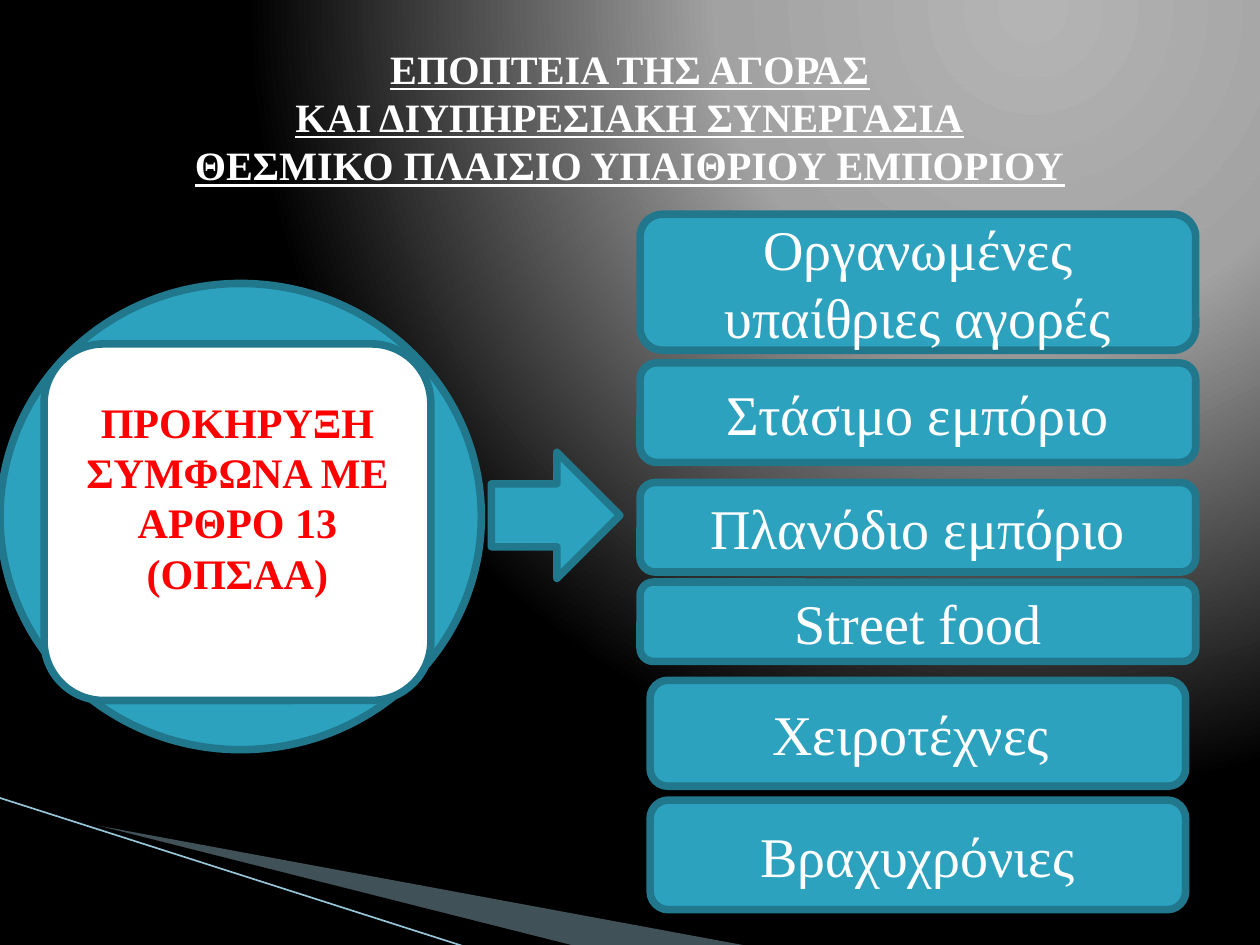
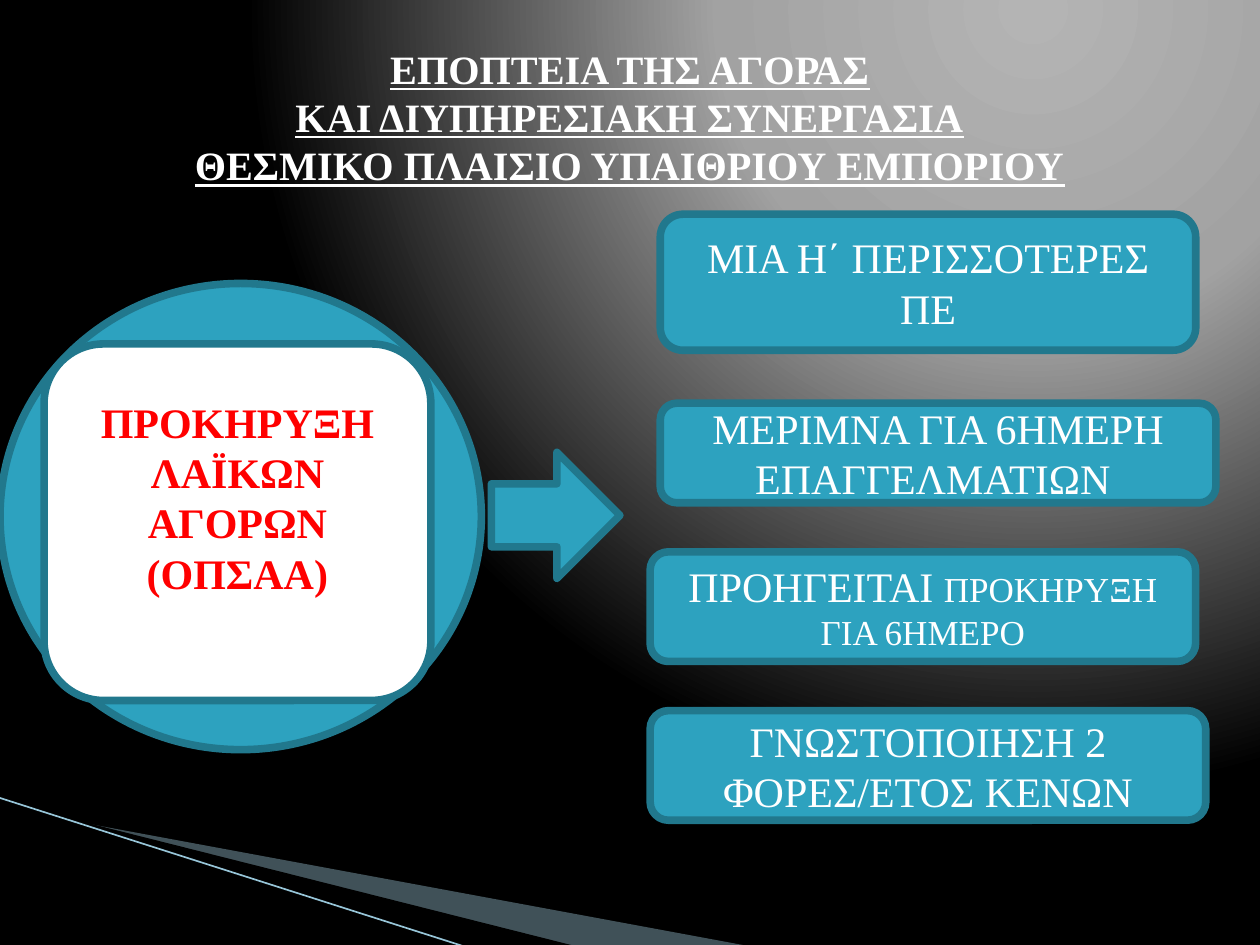
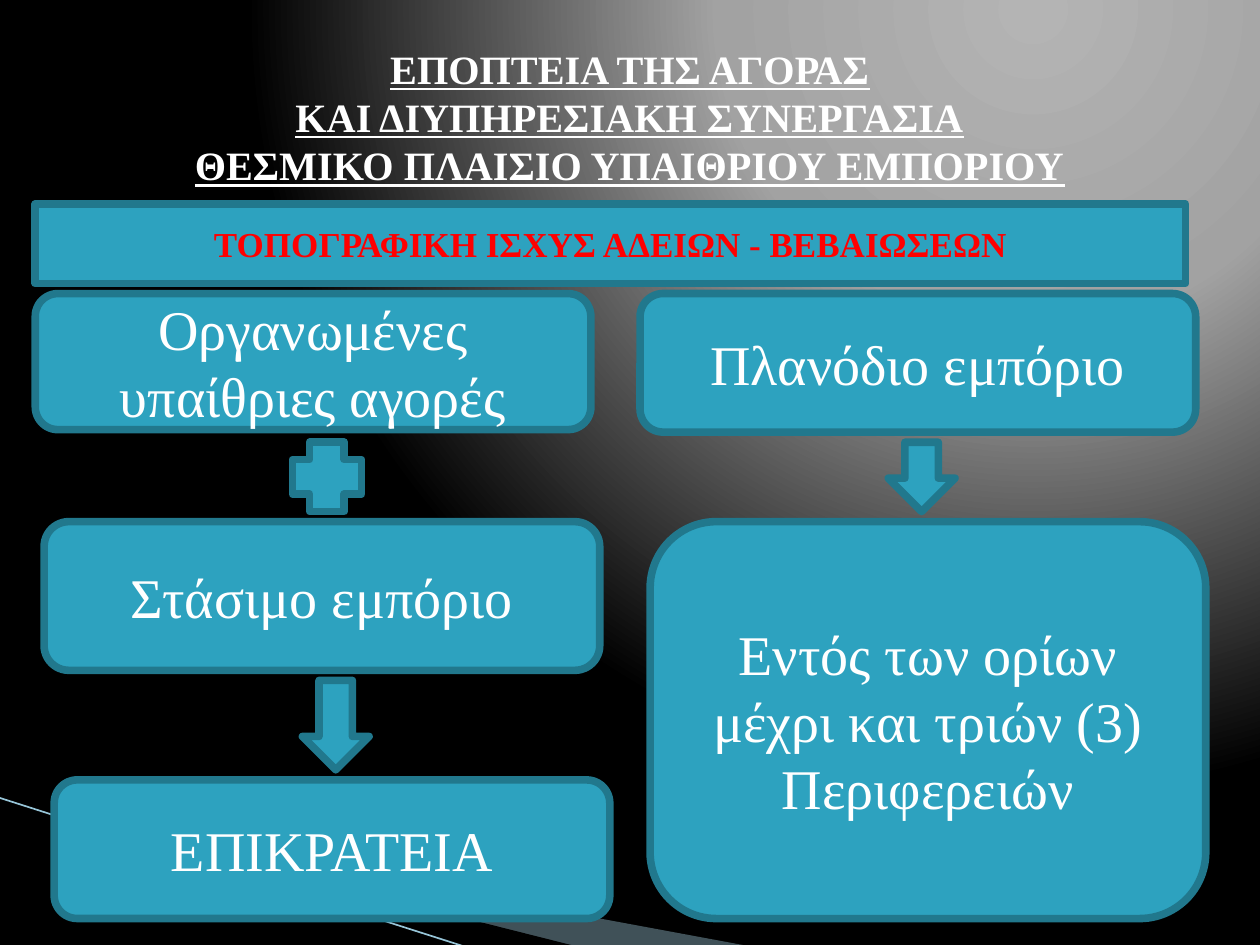
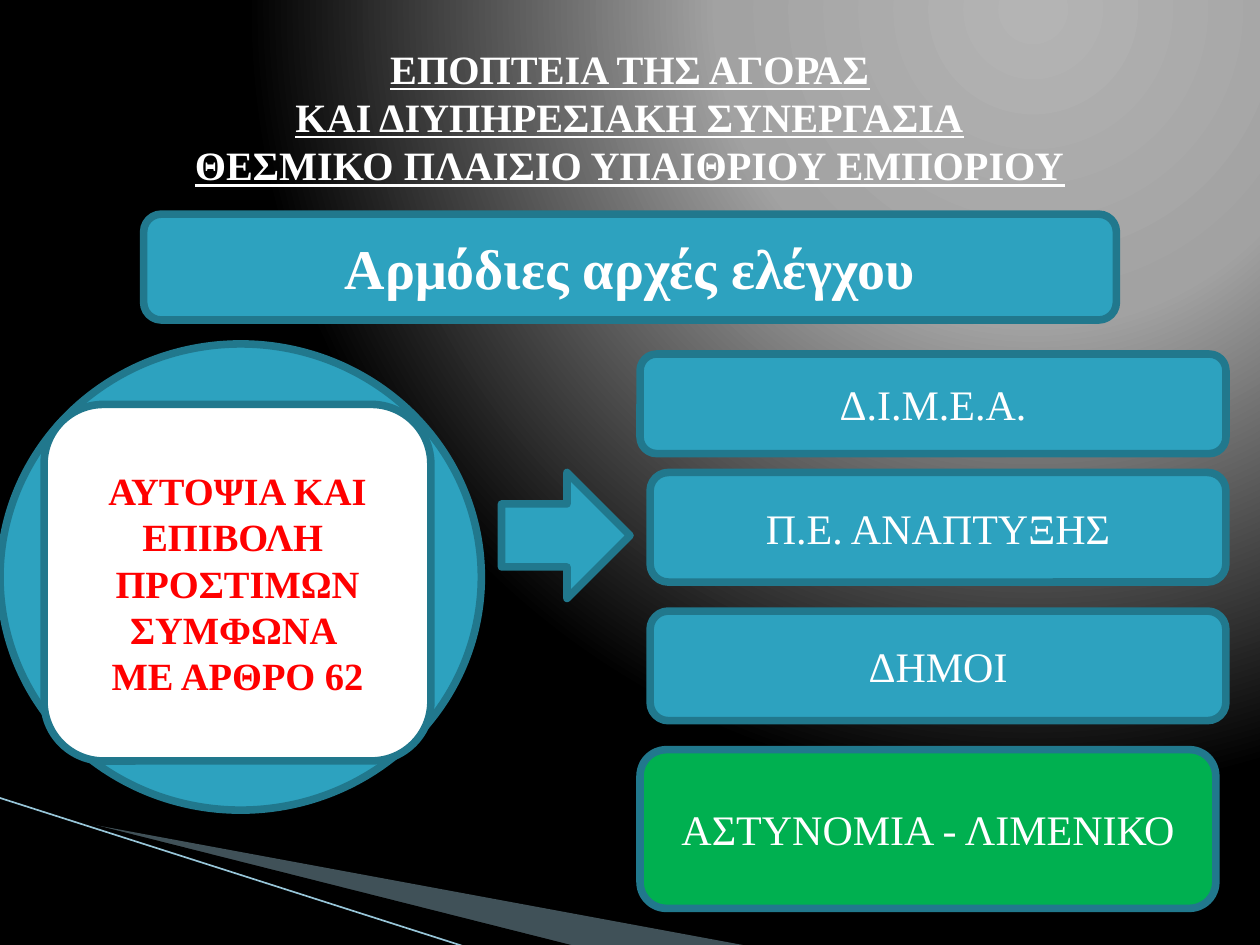
from pptx import Presentation
from pptx.dml.color import RGBColor
from pptx.enum.shapes import MSO_CONNECTOR, MSO_SHAPE
from pptx.enum.text import MSO_ANCHOR, PP_ALIGN
from pptx.oxml import parse_xml
from pptx.oxml.ns import nsdecls, qn
from pptx.oxml.xmlchemy import OxmlElement
from pptx.util import Inches, Pt

ROUNDED, RECTANGLE = MSO_SHAPE.ROUNDED_RECTANGLE, MSO_SHAPE.RECTANGLE
OVAL, PLUS = MSO_SHAPE.OVAL, MSO_SHAPE.CROSS
RIGHT_ARROW, DOWN_ARROW = MSO_SHAPE.RIGHT_ARROW, MSO_SHAPE.DOWN_ARROW
STRAIGHT = MSO_CONNECTOR.STRAIGHT
MIDDLE, CENTER = MSO_ANCHOR.MIDDLE, PP_ALIGN.CENTER

TEAL = RGBColor(0x2D, 0xA2, 0xBF)
DARK_TEAL = RGBColor(0x21, 0x78, 0x8D)
PALE_BLUE = RGBColor(0xA0, 0xCB, 0xDC)
LINE_BLUE = RGBColor(0x97, 0xC5, 0xD8)
GREEN = RGBColor(0x00, 0xB0, 0x50)
RED = RGBColor(0xFF, 0x00, 0x00)
WHITE = RGBColor(0xFF, 0xFF, 0xFF)
BLACK = RGBColor(0x00, 0x00, 0x00)
FONT = "Times New Roman"
OUTLINE = Pt(4.33)
BACKGROUND_STOPS = [(0, "B4B4B4"), (40, "A2A2A2"), (100, "000000")]
WEDGES = [  # corner points, fill, opacity in percent
    ([(0.55, 6.51), (5.95, 7.51), (4.56, 7.51), (0.55, 6.5)], PALE_BLUE, 40),
    ([(0.53, 6.49), (4.57, 7.51), (3.72, 7.52), (0.54, 6.5)], BLACK, 100),
]

TITLE = ["ΕΠΟΠΤΕΙΑ ΤΗΣ ΑΓΟΡΑΣ", "ΚΑΙ ΔΙΥΠΗΡΕΣΙΑΚΗ ΣΥΝΕΡΓΑΣΙΑ",
         "ΘΕΣΜΙΚΟ ΠΛΑΙΣΙΟ ΥΠΑΙΘΡΙΟΥ ΕΜΠΟΡΙΟΥ"]

# Each box: text, (left, top, width, height), text size, further settings.
# Each topic: circle top, paragraphs, text size, space below the text.
SLIDES = [
    {
        "topic": (2.25, ["ΠΡΟΚΗΡΥΞΗ ΣΥΜΦΩΝΑ ΜΕ ΑΡΘΡΟ 13", "(ΟΠΣΑΑ)"], 24, 0.45),
        "symbols": [(RIGHT_ARROW, (3.9, 3.59, 1.02, 1))],
        "boxes": [
            ("Οργανωμένες υπαίθριες αγορές", (5.08, 1.7, 4.41, 1.08), 32, {}),
            ("Στάσιμο εμπόριο", (5.08, 2.88, 4.41, 0.79), 32, {}),
            ("Πλανόδιο εμπόριο", (5.08, 3.83, 4.41, 0.71), 32, {}),
            ("Street food", (5.08, 4.62, 4.41, 0.63), 32, {}),
            ("Χειροτέχνες ", (5.16, 5.4, 4.25, 0.84), 32, {}),
            ("Βραχυχρόνιες", (5.16, 6.35, 4.25, 0.87), 32, {}),
        ],
    },
    {
        "topic": (2.25, ["ΠΡΟΚΗΡΥΞΗ ΛΑΪΚΩΝ ΑΓΟΡΩΝ", "(ΟΠΣΑΑ)"], 24, 0.45),
        "symbols": [(RIGHT_ARROW, (3.9, 3.59, 1.02, 1))],
        "boxes": [
            ("ΜΙΑ Η΄ ΠΕΡΙΣΣΟΤΕΡΕΣ ΠΕ", (5.24, 1.7, 4.25, 1.08), 24, {}),
            ("ΜΕΡΙΜΝΑ ΓΙΑ 6ΗΜΕΡΗ ΕΠΑΓΓΕΛΜΑΤΙΩΝ ", (5.24, 3.2, 4.41, 0.79), 24, {}),
            ("ΠΡΟΗΓΕΙΤΑΙ ", (5.16, 4.38, 4.33, 0.87), 24,
             {"small_text": "ΠΡΟΚΗΡΥΞΗ ΓΙΑ 6ΗΜΕΡΟ"}),
            ("ΓΝΩΣΤΟΠΟΙΗΣΗ 2 ΦΟΡΕΣ/ΕΤΟΣ ΚΕΝΩΝ", (5.16, 5.64, 4.41, 0.87), 24, {}),
        ],
    },
    {
        "symbols": [
            (PLUS, (2.32, 3.51, 0.55, 0.55)),
            (DOWN_ARROW, (2.4, 5.4, 0.53, 0.71)),
            (DOWN_ARROW, (7.05, 3.51, 0.53, 0.55)),
        ],
        "boxes": [
            ("ΤΟΠΟΓΡΑΦΙΚΗ ΙΣΧΥΣ ΑΔΕΙΩΝ - ΒΕΒΑΙΩΣΕΩΝ", (0.28, 1.62, 9.13, 0.63), 20,
             {"kind": RECTANGLE, "color": RED, "bold": True}),
            ("Οργανωμένες υπαίθριες αγορές", (0.28, 2.33, 4.41, 1.08), 32, {}),
            ("Στάσιμο εμπόριο", (0.35, 4.14, 4.41, 1.18), 32, {}),
            ("ΕΠΙΚΡΑΤΕΙΑ", (0.43, 6.19, 4.41, 1.1), 32, {}),
            ("Πλανόδιο εμπόριο", (5.08, 2.33, 4.41, 1.1), 32, {}),
            ("Εντός των ορίων μέχρι και τριών (3) Περιφερειών",
             (5.16, 4.14, 4.41, 3.15), 32, {}),
        ],
    },
    {
        "topic": (2.73, ["ΑΥΤΟΨΙΑ ΚΑΙ ΕΠΙΒΟΛΗ ", "ΠΡΟΣΤΙΜΩΝ", "ΣΥΜΦΩΝΑ ",
                         "ΜΕ ΑΡΘΡΟ 62"], 22, 0.05),
        "symbols": [(RIGHT_ARROW, (3.98, 3.75, 1.02, 1))],
        "boxes": [
            ("Αρμόδιες αρχές ελέγχου", (1.14, 1.7, 7.72, 0.84), 32, {"bold": True}),
            ("Δ.Ι.Μ.Ε.Α.", (5.08, 2.81, 4.65, 0.79), 24, {}),
            ("Π.Ε. ΑΝΑΠΤΥΞΗΣ", (5.16, 3.75, 4.57, 0.87), 24, {}),
            ("ΔΗΜΟΙ", (5.16, 4.85, 4.57, 0.87), 24, {}),
            ("ΑΣΤΥΝΟΜΙΑ - ΛΙΜΕΝΙΚΟ", (5.08, 5.95, 4.57, 1.26), 24, {"fill": GREEN}),
        ],
    },
]


def set_background(slide):
    stops = "".join(f'<a:gs pos="{position * 1000}"><a:srgbClr val="{color}"/></a:gs>'
                    for position, color in BACKGROUND_STOPS)
    background = parse_xml(
        f'<p:bg {nsdecls("p", "a")}><p:bgPr><a:gradFill rotWithShape="1">'
        f'<a:gsLst>{stops}</a:gsLst><a:path path="circle">'
        '<a:fillToRect l="65000" t="0" r="0" b="98000"/></a:path></a:gradFill>'
        '<a:effectLst/></p:bgPr></p:bg>')
    slide.element.find(qn("p:cSld")).insert(0, background)


def add_wedges(slide):
    """Draw the wedge and the thin line in the lower left corner."""
    for points, color, opacity in WEDGES:
        corners = [(Inches(x), Inches(y)) for x, y in points]
        builder = slide.shapes.build_freeform(*corners[0])
        builder.add_line_segments(corners[1:], close=True)
        wedge = builder.convert_to_shape()
        wedge.shadow.inherit = False
        wedge.fill.solid()
        wedge.fill.fore_color.rgb = color
        wedge.line.fill.background()
        if opacity < 100:
            alpha = OxmlElement("a:alpha")
            alpha.set("val", str(opacity * 1000))
            wedge.element.spPr.find(f"{qn('a:solidFill')}/{qn('a:srgbClr')}").append(alpha)
    ends = [Inches(value) for value in (-0.01, 6.33, 3.71, 7.52)]
    connector = slide.shapes.add_connector(STRAIGHT, *ends)
    connector.line.color.rgb = LINE_BLUE
    connector.line.width = Pt(0.95)
    connector.element.spPr.append(OxmlElement("a:effectLst"))


def add_run(paragraph, text, size, color=WHITE, **settings):
    run = paragraph.add_run()
    run.text = text
    run.font.color.rgb = color
    for name, value in {"name": FONT, "size": Pt(size), **settings}.items():
        setattr(run.font, name, value)


def prepare_frame(shape):
    frame = shape.text_frame
    frame.word_wrap = True
    frame.vertical_anchor = MIDDLE
    frame.paragraphs[0].alignment = CENTER
    return frame


def add_title(slide):
    title = slide.shapes.add_textbox(Inches(0.5), Inches(0.3), Inches(9), Inches(1.25))
    paragraph = prepare_frame(title).paragraphs[0]
    for index, line in enumerate(TITLE):
        if index:
            paragraph.add_line_break()
        add_run(paragraph, line, 23, bold=True, underline=True)


def add_outlined(slide, kind, place, fill=TEAL):
    shape = slide.shapes.add_shape(kind, *[Inches(value) for value in place])
    shape.shadow.inherit = False
    shape.fill.solid()
    shape.fill.fore_color.rgb = fill
    shape.line.color.rgb = DARK_TEAL
    shape.line.width = OUTLINE
    return shape


def add_box(slide, text, place, size, kind=ROUNDED, fill=TEAL, small_text="", **settings):
    paragraph = prepare_frame(add_outlined(slide, kind, place, fill)).paragraphs[0]
    add_run(paragraph, text, size, **settings)
    if small_text:
        add_run(paragraph, small_text, 20, **settings)


def add_topic(slide, top, lines, size, space_below):
    """Draw the circle with the white panel that names the topic."""
    add_outlined(slide, OVAL, (0, top, 3.82, 3.7))
    panel = add_outlined(slide, ROUNDED, (0.35, top + 0.48, 3.07, 2.83), WHITE)
    frame = prepare_frame(panel)
    frame.margin_bottom = Inches(space_below)
    for index, line in enumerate(lines):
        paragraph = frame.add_paragraph() if index else frame.paragraphs[0]
        paragraph.alignment = CENTER
        add_run(paragraph, line, size, RED, bold=True)


def main():
    presentation = Presentation()
    presentation.slide_width, presentation.slide_height = Inches(10), Inches(7.5)
    for content in SLIDES:
        slide = presentation.slides.add_slide(presentation.slide_layouts[6])
        set_background(slide)
        add_wedges(slide)
        add_title(slide)
        for kind, place in content["symbols"]:
            add_outlined(slide, kind, place)
        for text, place, size, settings in content["boxes"]:
            add_box(slide, text, place, size, **settings)
        if "topic" in content:
            add_topic(slide, *content["topic"])
    presentation.save("out.pptx")


if __name__ == "__main__":
    main()
